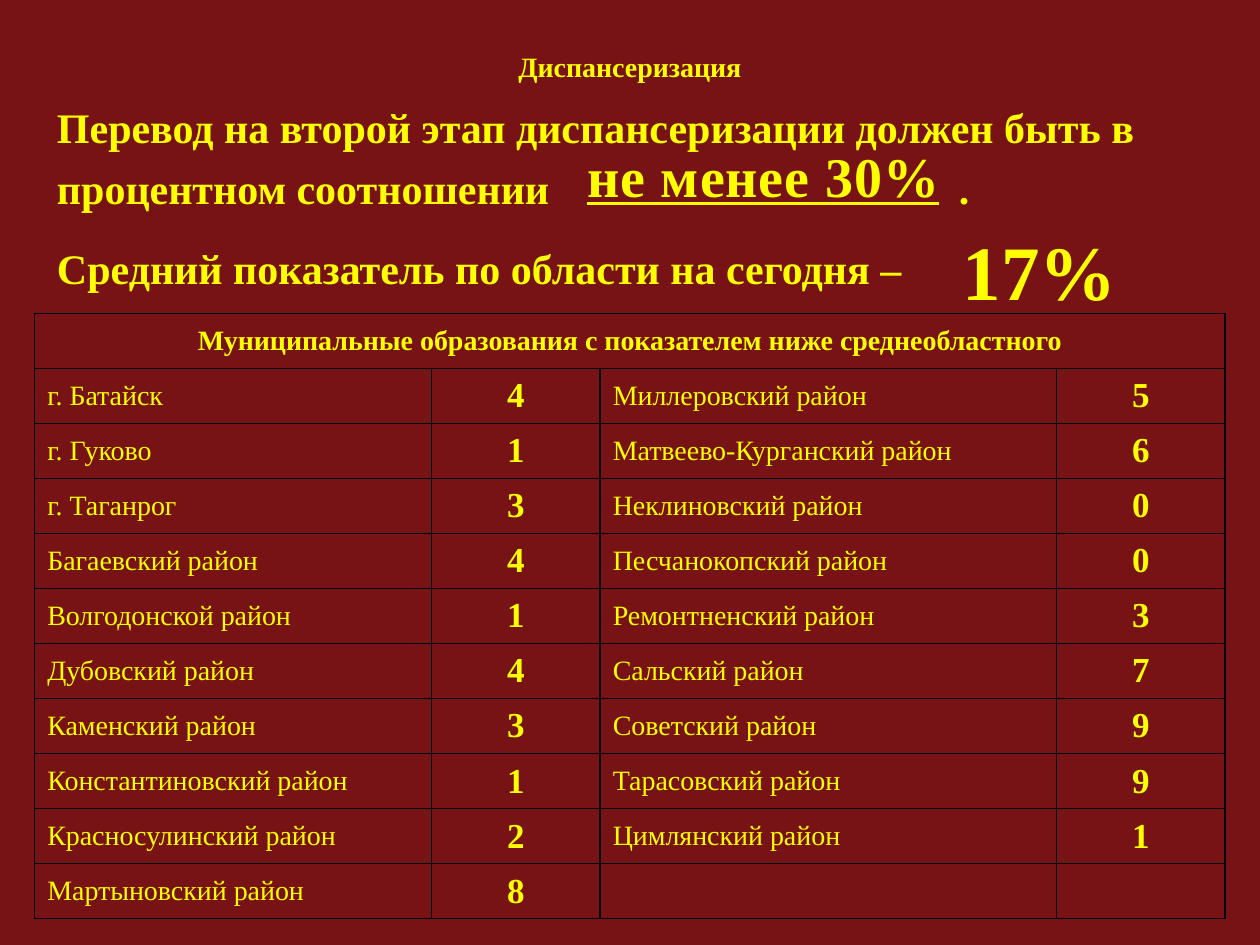
"""Build the slide on regional medical check-up indicators."""
from dataclasses import dataclass

import lxml.etree
import pptx
import pptx.dml.color
import pptx.enum.text
import pptx.oxml.ns
import pptx.util
from pptx.util import Cm, Pt

FONT = "Times New Roman"
YELLOW, MAROON, BLACK = "FFFF00", "771315", "000000"
CENTER = pptx.enum.text.PP_ALIGN.CENTER
LEFT = pptx.enum.text.PP_ALIGN.LEFT
MIDDLE = pptx.enum.text.MSO_ANCHOR.MIDDLE


@dataclass
class Area:
    left: float
    top: float
    width: float
    height: float

    def lengths(self) -> tuple:
        return Cm(self.left), Cm(self.top), Cm(self.width), Cm(self.height)


@dataclass
class Statement:
    text: str
    space_before: float


@dataclass
class Highlight:
    text: str
    area: Area
    size: int
    underline: bool = False
    spacing: int = 0


@dataclass
class District:
    name: str
    percent: int


STATEMENTS = [
    Statement("Перевод на второй этап диспансеризации должен быть в", 5.6),
    Statement("процентном соотношении\t.", 5.6),
    Statement("Средний показатель по области на сегодня –", 17),
]
HIGHLIGHTS = [
    Highlight("не менее 30%", Area(11.07, 2.72, 8.64, 1.62), 32, True, 50),
    Highlight("17%", Area(18.87, 4.39, 4.19, 2.13), 44),
]
FIRST_HALF = [
    District("г. Батайск", 4),
    District("г. Гуково", 1),
    District("г. Таганрог", 3),
    District("Багаевский район", 4),
    District("Волгодонской район", 1),
    District("Дубовский район", 4),
    District("Каменский район", 3),
    District("Константиновский район", 1),
    District("Красносулинский район", 2),
    District("Мартыновский район", 8),
]
SECOND_HALF = [
    District("Миллеровский район", 5),
    District("Матвеево-Курганский район", 6),
    District("Неклиновский район", 0),
    District("Песчанокопский район", 0),
    District("Ремонтненский район", 3),
    District("Сальский район", 7),
    District("Советский район", 9),
    District("Тарасовский район", 9),
    District("Цимлянский район", 1),
]
COLUMN_WIDTHS = [8, 3.4, 9.2, 3.4]


def color(value: str) -> pptx.dml.color.RGBColor:
    return pptx.dml.color.RGBColor.from_string(value)


def add_run(paragraph, text: str, size: int, bold: bool = True, align=LEFT):
    paragraph.alignment = align
    run = paragraph.add_run()
    run.text = text
    run.font.name = FONT
    run.font.size = Pt(size)
    run.font.bold = bold
    run.font.color.rgb = color(YELLOW)
    return run


def add_title(slide, text: str, area: Area) -> None:
    title = slide.shapes.title
    title.left, title.top, title.width, title.height = area.lengths()
    title.text_frame.vertical_anchor = MIDDLE
    add_run(title.text_frame.paragraphs[0], text, 16, align=CENTER)


def add_statements(slide, statements: list[Statement], area: Area, tab: float) -> None:
    frame = slide.shapes.add_textbox(*area.lengths()).text_frame
    frame.word_wrap = True
    for index, statement in enumerate(statements):
        paragraph = frame.add_paragraph() if index else frame.paragraphs[0]
        paragraph.space_before = Pt(statement.space_before)
        add_run(paragraph, statement.text, 24)
        if "\t" in statement.text:
            qn = pptx.oxml.ns.qn
            tabs = lxml.etree.SubElement(paragraph._p.get_or_add_pPr(), qn("a:tabLst"))
            lxml.etree.SubElement(tabs, qn("a:tab"), pos=str(Cm(tab)), algn="l")


def add_highlight(slide, highlight: Highlight) -> None:
    frame = slide.shapes.add_textbox(*highlight.area.lengths()).text_frame
    frame.word_wrap = True
    run = add_run(frame.paragraphs[0], highlight.text, highlight.size, align=CENTER)
    run.font.underline = highlight.underline
    if highlight.spacing:
        run._r.get_or_add_rPr().set("spc", str(highlight.spacing))


def format_cell(cell) -> None:
    qn = pptx.oxml.ns.qn
    properties = cell._tc.get_or_add_tcPr()
    for side in ("a:lnL", "a:lnR", "a:lnT", "a:lnB"):
        border = lxml.etree.SubElement(properties, qn(side), w=str(Pt(1)))
        fill = lxml.etree.SubElement(border, qn("a:solidFill"))
        lxml.etree.SubElement(fill, qn("a:srgbClr"), val=BLACK)
    cell.fill.background()
    cell.vertical_anchor = MIDDLE


def add_district_table(slide, heading: str, halves: list[list[District]], area: Area) -> None:
    row_count = 1 + max(map(len, halves))
    table = slide.shapes.add_table(row_count, len(COLUMN_WIDTHS), *area.lengths()).table
    table.first_row = table.horz_banding = False
    for column, width in zip(table.columns, COLUMN_WIDTHS):
        column.width = Cm(width)
    for cell in table.iter_cells():
        format_cell(cell)
    table.cell(0, 0).merge(table.cell(0, len(COLUMN_WIDTHS) - 1))
    add_run(table.cell(0, 0).text_frame.paragraphs[0], heading, 16, align=CENTER)
    for half, districts in enumerate(halves):
        for row, district in enumerate(districts, 1):
            name = table.cell(row, 2 * half).text_frame.paragraphs[0]
            percent = table.cell(row, 2 * half + 1).text_frame.paragraphs[0]
            add_run(name, district.name, 16, bold=False)
            add_run(percent, str(district.percent), 20, align=CENTER)


def main() -> None:
    presentation = pptx.Presentation()
    presentation.slide_width, presentation.slide_height = Cm(25.4), Cm(19.05)
    slide = presentation.slides.add_slide(presentation.slide_layouts[5])
    slide.background.fill.solid()
    slide.background.fill.fore_color.rgb = color(MAROON)
    add_title(slide, "Диспансеризация", Area(0.7, 0.76, 24, 1.17))
    add_statements(slide, STATEMENTS, Area(0.9, 1.93, 23.8, 4.62), tab=18.18)
    for highlight in HIGHLIGHTS:
        add_highlight(slide, highlight)
    add_district_table(
        slide,
        "Муниципальные образования с показателем ниже среднеобластного",
        [FIRST_HALF, SECOND_HALF],
        Area(0.7, 6.32, 24, 12.2),
    )
    presentation.save("out.pptx")


if __name__ == "__main__":
    main()
